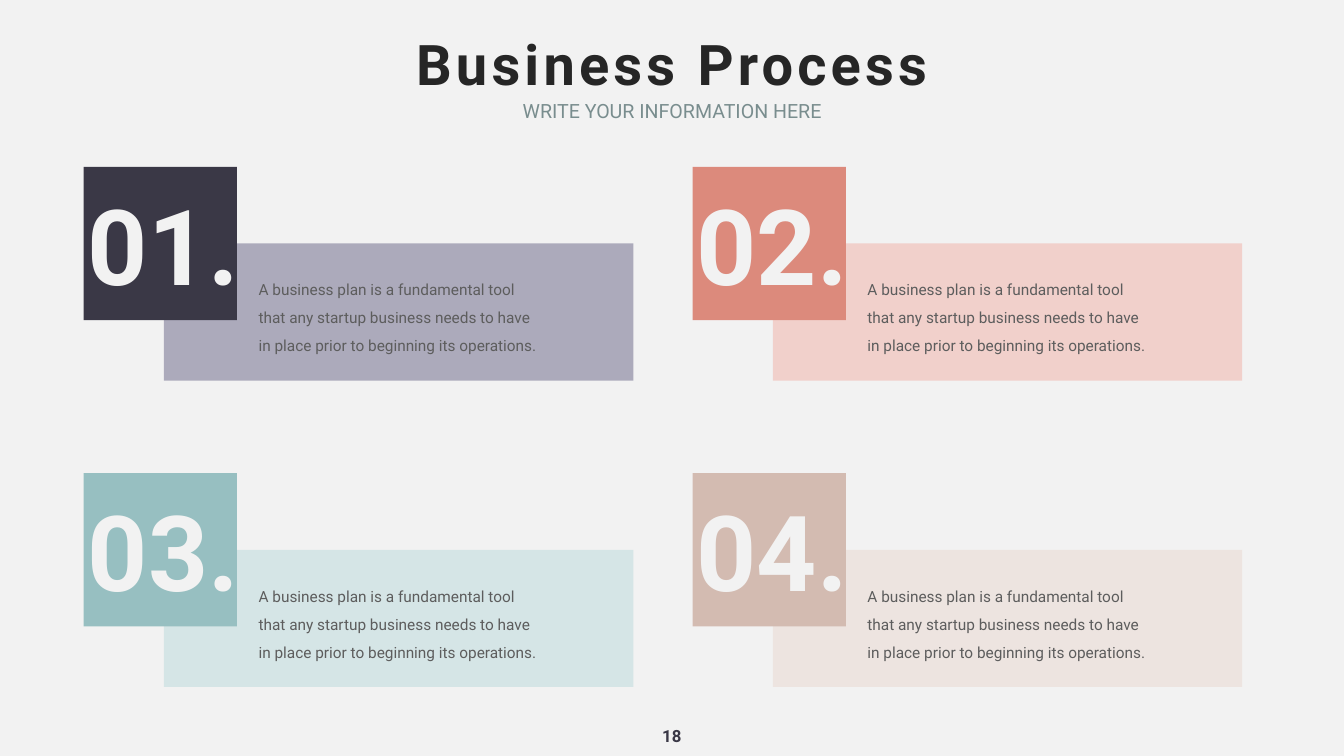
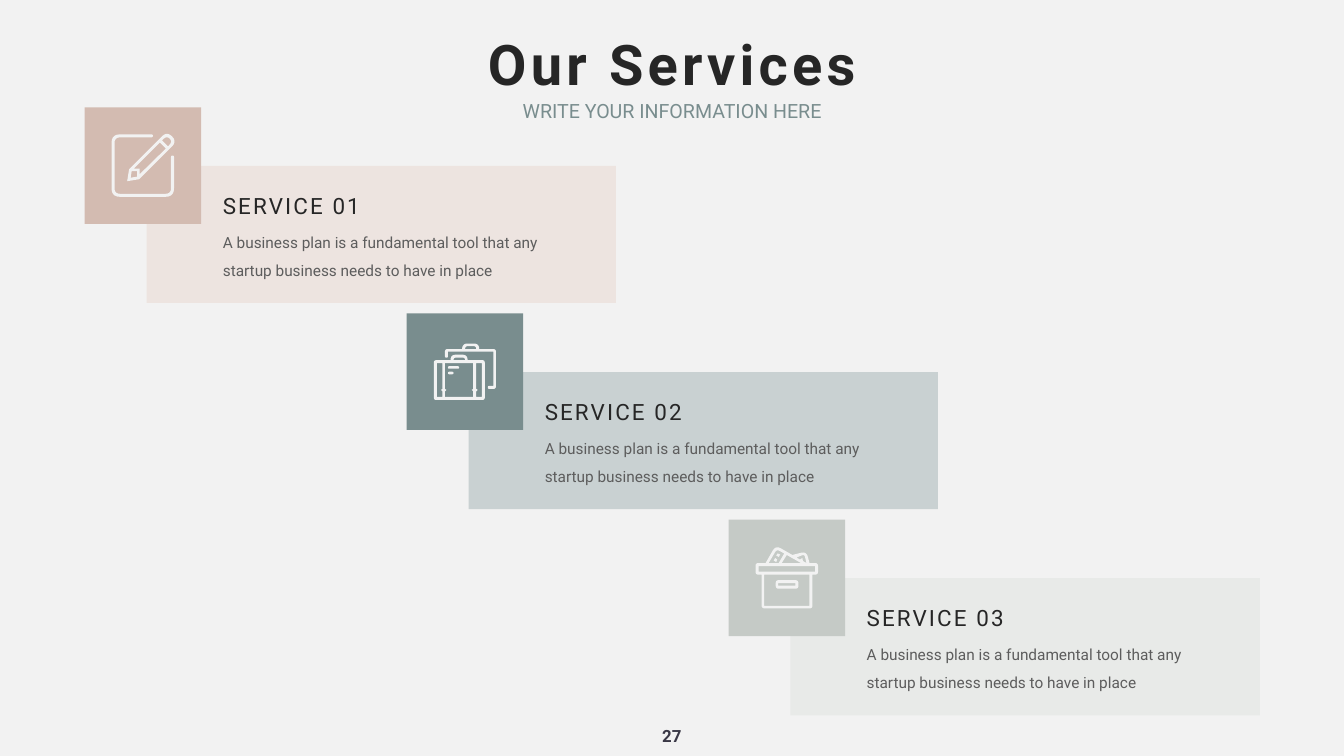
from pptx import Presentation
from pptx.dml.color import RGBColor
from pptx.enum.shapes import MSO_SHAPE
from pptx.enum.text import MSO_ANCHOR, MSO_AUTO_SIZE, PP_ALIGN
from pptx.util import Cm, Pt

RECT = MSO_SHAPE.RECTANGLE
TOP, MIDDLE, BOTTOM = MSO_ANCHOR.TOP, MSO_ANCHOR.MIDDLE, MSO_ANCHOR.BOTTOM
LEFT, CENTER, RIGHT = PP_ALIGN.LEFT, PP_ALIGN.CENTER, PP_ALIGN.RIGHT
GROW = MSO_AUTO_SIZE.SHAPE_TO_FIT_TEXT

FONT = "Roboto"
WIDE, HIGH = 67.72, 38.1
BAND = (23.65, 6.91)
UNIT = 0.0254  # cm for each step of the icon grid
COLORS = {
    "paper": "F2F2F2", "ink": "262626", "body": "5D5D5D",
    "navy": "3A3846", "lilac": "ACAABB",
    "coral": "DC8A7C", "blush": "F1D0CB",
    "teal": "97BFC1", "mist": "D5E5E6",
    "tan": "D3BBB1", "cream": "EDE4E0",
    "slate": "798D8E", "cloud": "C9D1D2",
    "sage": "C5CAC6", "pale": "E8EAE8",
}

PLAN = "A business plan is a fundamental tool that any startup business needs to have in place"
STEPS = [("01.", "navy", "lilac"), ("02.", "coral", "blush"),
         ("03.", "teal", "mist"), ("04.", "tan", "cream")]


def block(x1, y1, x2, y2, r=0):
    return [(x1, y1, r), (x2, y1, r), (x2, y2, r), (x1, y2, r)]


# Each outline is a list of corners: x, y and, where rounded, a radius.
PENCIL = [
    [(124, 42, 3), (124, 124, 17), (0, 124, 17), (0, 0, 17), (82, 0, 3),
     (82, 6, 3), (6, 6, 11), (6, 118, 11), (118, 118, 11), (118, 42, 3)],
    [(31, 93), (35, 69), (110, -6, 14), (130, 14, 14), (55, 89)],
    [(40, 73), (51, 73), (51, 84), (38, 86)],
    [(96, 16), (108, 28), (56, 79), (56, 68), (44, 68)],
    [(100, 12), (110, 3, 8), (121, 14, 8), (112, 24)],
]
CASES = [
    [(0, 33, 5), (33, 33), (33, 22, 11), (67, 22, 11), (67, 33),
     (101, 33, 5), (101, 112, 5), (0, 112, 5)],
    [(39, 33), (39, 28, 5), (62, 28, 5), (62, 33)],
    [(6, 39), (17, 39), (17, 90), (14, 92), (17, 95), (17, 106), (6, 106)],
    [(22, 39), (78, 39), (78, 90), (75, 92), (78, 95), (78, 106),
     (22, 106), (22, 95), (25, 92), (22, 90)],
    [(84, 39), (95, 39), (95, 106), (84, 106), (84, 95), (87, 92), (84, 90)],
    block(28, 45, 50, 50, 2.5),
    block(28, 56, 39, 61, 2.5),
    [(22, 11, 5), (56, 11), (56, 0, 11), (90, 0, 11), (90, 11), (123, 11, 5),
     (123, 90, 5), (107, 90, 3), (107, 84, 3), (118, 84), (118, 16),
     (28, 16), (28, 28, 3), (22, 28, 3)],
    [(62, 11), (62, 5, 6), (84, 5, 6), (84, 11)],
]
CRATE = [
    [(0, 31, 6), (20, 31), (40, -4, 12), (73, 15), (101, 8, 11), (107, 31),
     (124, 31, 6), (124, 54, 6), (113, 54), (113, 121, 6), (12, 121, 6),
     (12, 54), (0, 54, 6)],
    block(6, 37, 118, 48),
    block(17, 54, 107, 116),
    block(40, 65, 85, 82, 6),
    block(45, 71, 79, 76),
    [(26, 31), (42, 4, 6), (57, 12), (46, 31)],
    [(39, 21), (43, 24), (41, 29), (36, 26)],
    [(44, 12), (49, 14), (46, 19), (41, 16)],
    [(52, 31), (62, 15), (90, 31)],
    [(81, 20), (97, 14, 5), (101, 31), (94, 27), (93, 21), (88, 24)],
]
SERVICES = [("SERVICE 01", "tan", "cream", PENCIL),
            ("SERVICE 02", "slate", "cloud", CASES),
            ("SERVICE 03", "sage", "pale", CRATE)]


def tint(name):
    return RGBColor.from_string(COLORS[name])


def paint(shape, color):
    shape.shadow.inherit = False
    shape.fill.solid()
    shape.fill.fore_color.rgb = tint(color)
    shape.line.fill.background()


def panel(slide, x, y, size, color):
    w, h = size
    paint(slide.shapes.add_shape(RECT, Cm(x), Cm(y), Cm(w), Cm(h)), color)


def label(slide, x, y, w, h, text, size, color, bold=False, align=LEFT,
          anchor=TOP, wrap=False, after=None, track=0):
    """Add a text box; a value for after also sets the 40 pt line pitch."""
    box = slide.shapes.add_textbox(Cm(x), Cm(y), Cm(w), Cm(h))
    frame = box.text_frame
    frame.word_wrap = wrap
    frame.auto_size = GROW
    frame.vertical_anchor = anchor
    para = frame.paragraphs[0]
    para.text = text
    para.alignment = align
    if after:
        para.line_spacing = Pt(40)
        para.space_after = Pt(after)
    font = para.font
    font.name, font.size, font.bold = FONT, Pt(size), bold
    font.color.rgb = tint(color)
    if track:
        para._p.xpath("a:pPr/a:defRPr")[0].set("spc", str(track * 100))


def trace(corners):
    """Turn corners into points, with a short curve at each rounded one."""
    points = []
    for i, (x, y, *rest) in enumerate(corners):
        if not rest or not rest[0]:
            points.append((x, y))
            continue
        ends = []
        for near in (corners[i - 1], corners[(i + 1) % len(corners)]):
            dx, dy = near[0] - x, near[1] - y
            part = rest[0] / (dx * dx + dy * dy) ** 0.5
            ends.append((x + dx * part, y + dy * part))
        (ax, ay), (bx, by) = ends
        for t in (0, 0.2, 0.4, 0.6, 0.8, 1):
            a, m, b = (1 - t) ** 2, 2 * t * (1 - t), t * t
            points.append((a * ax + m * x + b * bx, a * ay + m * y + b * by))
    return points


def icon(slide, x, y, side, outlines):
    """Draw one filled icon in the middle of a square."""
    paths = [trace(corners) for corners in outlines]
    wide, high = (max(p[k] for path in paths for p in path) for k in (0, 1))
    left, top = x + (side - wide * UNIT) / 2, y + (side - high * UNIT) / 2
    pen = None
    for path in paths:
        first, *others = [(Cm(left + px * UNIT), Cm(top + py * UNIT))
                          for px, py in path]
        if pen is None:
            pen = slide.shapes.build_freeform(*first)
        else:
            pen.move_to(*first)
        pen.add_line_segments(others, close=True)
    paint(pen.convert_to_shape(), "paper")


def start(deck, title, width, number):
    """Add a slide with its background, page number, title and subtitle."""
    slide = deck.slides.add_slide(deck.slide_layouts[6])
    slide.background.fill.solid()
    slide.background.fill.fore_color.rgb = tint("paper")
    label(slide, 33.07, 36.45, 1.57, 1.27, number, 24, "navy", True,
          CENTER, MIDDLE)
    label(slide, (WIDE - width) / 2, 1.32, width, 3.68, title, 80, "ink",
          True, CENTER, BOTTOM, track=6)
    label(slide, (WIDE - 15.8) / 2, 4.65, 15.8, 1.57,
          "WRITE YOUR INFORMATION HERE", 28, "slate", align=CENTER, after=12)
    return slide


def step(slide, x, y, number, dark, light):
    panel(slide, x + 4.04, y + 3.86, BAND, light)
    panel(slide, x, y, (7.72, 7.72), dark)
    label(slide, x + 8.56, y + 5.11, 14.63, 4.37,
          PLAN + " prior to beginning its operations.", 22, "body",
          wrap=True, after=18)
    label(slide, x - 0.13, y + 0.51, 8.2, 6.68, number, 150, "paper", True,
          RIGHT, MIDDLE)


def service(slide, x, y, name, dark, light, outlines):
    side = 5.87
    panel(slide, x + 3.12, y + 2.95, BAND, light)
    panel(slide, x, y, (side, side), dark)
    label(slide, x + 6.71, y + 5.74, 18.9, 2.95, PLAN, 22, "body",
          wrap=True, after=18)
    label(slide, x + 6.71, y + 4.11, 7.57, 1.63, name, 32, "ink",
          anchor=BOTTOM, track=3)
    icon(slide, x, y, side, outlines)


def process(deck):
    slide = start(deck, "Business Process", 26.75, "18")
    for i, item in enumerate(STEPS):
        row, col = divmod(i, 2)
        step(slide, 4.22 + col * 30.68, 8.41 + row * 15.44, *item)


def offers(deck):
    slide = start(deck, "Our Services", 19.33, "27")
    for i, item in enumerate(SERVICES):
        service(slide, 4.27 + i * 16.22, 5.41 + i * 10.39, *item)


def main():
    deck = Presentation()
    deck.slide_width, deck.slide_height = Cm(WIDE), Cm(HIGH)
    process(deck)
    offers(deck)
    deck.save("out.pptx")


if __name__ == "__main__":
    main()
